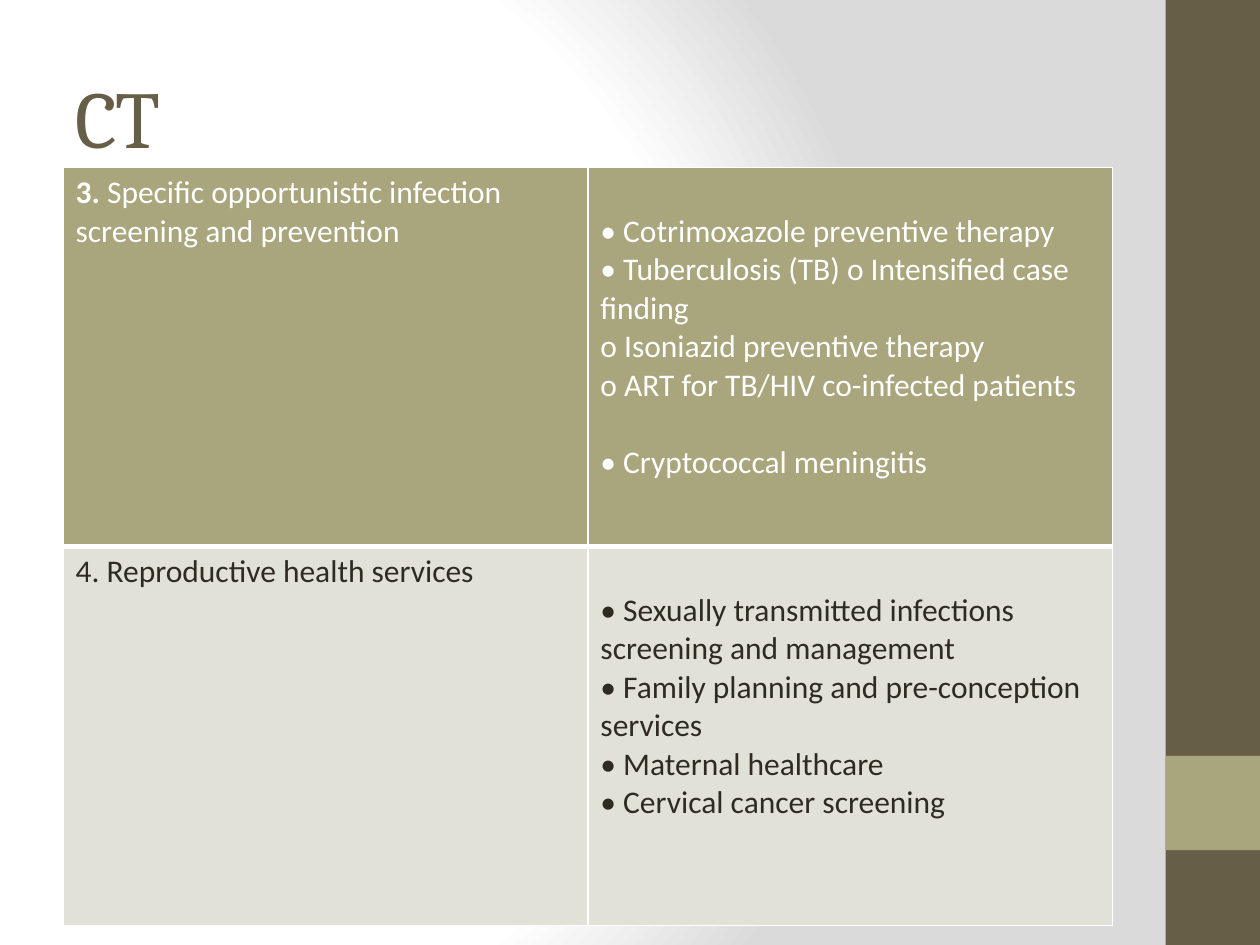
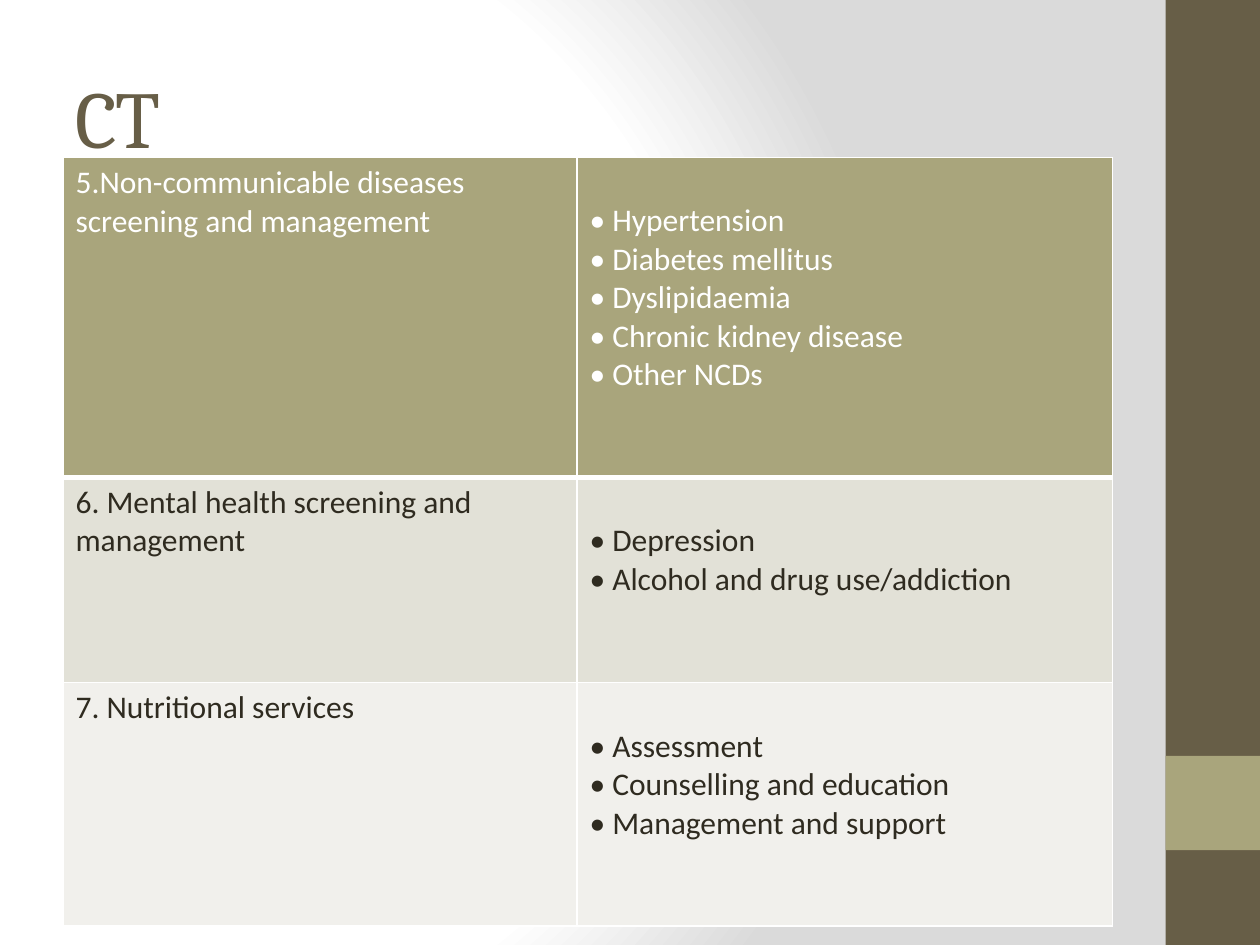
"""Build two slides listing the services of a care package in tables."""
from lxml.etree import SubElement, fromstring
from pptx import Presentation
from pptx.dml.color import RGBColor
from pptx.enum.shapes import MSO_SHAPE
from pptx.enum.text import MSO_ANCHOR
from pptx.oxml.ns import nsdecls, qn
from pptx.util import Cm, Pt

COLORS = {"white": "FFFFFF", "shade": "DADADA", "brown": "675E47", "olive": "A9A57C",
          "text": "2F2B20", "band1": "E2E1D7", "band2": "F1F0EC"}
ROW_FILLS = ["olive", "band1", "band2"]
TITLE_FONT, BODY_FONT = "Cambria", "Calibri"
LEFT, LINE = 1.27, 22
SIDE_BANDS = [(0, 19.05, "brown"), (15.24, 1.9, "olive")]

SLIDES = [
    {"title": "CT", "top": 3.38, "cols": [10.58, 10.58], "rows": [
        (7.64, [("3.", True), (" Specific opportunistic infection screening and prevention", False)],
         ["• Cotrimoxazole preventive therapy",
          "• Tuberculosis (TB) o Intensified case finding",
          "o Isoniazid preventive therapy",
          "o ART for TB/HIV co-infected patients",
          "• Cryptococcal meningitis"]),
        (7.64, [("4. Reproductive health services", False)],
         ["• Sexually transmitted infections screening and management",
          "• Family planning and pre-conception services",
          "• Maternal healthcare",
          "• Cervical cancer screening"]),
    ]},
    {"title": "CT", "top": 3.17, "cols": [10.36, 10.8], "rows": [
        (6.45, [("5.Non-communicable diseases screening and management", False)],
         ["• Hypertension", "• Diabetes mellitus", "• Dyslipidaemia",
          "• Chronic kidney disease", "• Other NCDs"]),
        (4.14, [("6. Mental health screening and management", False)],
         ["• Depression", "• Alcohol and drug use/addiction"]),
        (4.91, [("7. Nutritional services", False)],
         ["• Assessment", "• Counselling and education", "• Management and support"]),
    ]},
]
SPACED = {"• Cryptococcal meningitis"}


def rgb(name):
    return RGBColor.from_string(COLORS[name])


def set_background(master):
    master.background.fill.gradient()
    stops = "".join(f'<a:gs pos="{pos * 1000}"><a:srgbClr val="{COLORS[c]}"/></a:gs>'
                    for pos, c in [(0, "white"), (75, "white"), (100, "shade")])
    grad = fromstring(
        f'<a:gradFill {nsdecls("a")} rotWithShape="1"><a:gsLst>{stops}</a:gsLst><a:path path="circle">'
        '<a:fillToRect l="20000" t="50000" r="100000" b="50000"/></a:path></a:gradFill>')
    old = master.element.find(".//" + qn("a:gradFill"))
    old.getparent().replace(old, grad)


def add_run(p, text, font, size, color, bold=False):
    r = p.add_run()
    r.text = text
    r.font.name, r.font.size, r.font.bold = font, Pt(size), bold
    r.font.color.rgb = rgb(color)
    return r


def add_frame(s, title):
    for top, height, color in SIDE_BANDS:
        band = s.shapes.add_shape(MSO_SHAPE.RECTANGLE, Cm(23.5), Cm(top), Cm(1.9), Cm(height))
        band.shadow.inherit = False
        band.fill.solid()
        band.fill.fore_color.rgb = rgb(color)
        band.line.fill.background()
    tf = s.shapes.add_textbox(Cm(LEFT), Cm(0.76), Cm(21.16), Cm(3.18)).text_frame
    tf.word_wrap = True
    tf.vertical_anchor = MSO_ANCHOR.MIDDLE
    r = add_run(tf.paragraphs[0], title, TITLE_FONT, 46, "brown")
    r.font._element.set("spc", "-100")


def style_cell(cell, fill, top, bottom):
    tc_pr = cell._tc.get_or_add_tcPr()
    for side, width in [("L", 1), ("R", 1), ("T", top), ("B", bottom)]:
        ln = SubElement(tc_pr, qn(f"a:ln{side}"), w=str(Pt(width)))
        SubElement(SubElement(ln, qn("a:solidFill")), qn("a:srgbClr"), val=COLORS["white"])
    cell.fill.solid()
    cell.fill.fore_color.rgb = rgb(fill)


def add_services(s, top, cols, rows):
    height = sum(row[0] for row in rows)
    table = s.shapes.add_table(len(rows), len(cols), Cm(LEFT), Cm(top),
                               Cm(sum(cols)), Cm(height)).table
    table.first_row = table.horz_banding = False
    for column, width in zip(table.columns, cols):
        column.width = Cm(width)
    for i, (height, heading, services) in enumerate(rows):
        table.rows[i].height = Cm(height)
        color = "text" if i else "white"
        name_cell, list_cell = table.cell(i, 0), table.cell(i, 1)
        for cell in (name_cell, list_cell):
            style_cell(cell, ROW_FILLS[i], 3 if i == 1 else 1, 1 if i else 3)
        for text, bold in heading:
            add_run(name_cell.text_frame.paragraphs[0], text, BODY_FONT, 18, color, bold)
        list_cell.margin_top = Cm(0.9)
        tf = list_cell.text_frame
        for j, service in enumerate(services):
            p = tf.add_paragraph() if j else tf.paragraphs[0]
            if service in SPACED:
                p.space_before = Pt(LINE)
            add_run(p, service, BODY_FONT, 18, color)


def main():
    prs = Presentation()
    prs.slide_width, prs.slide_height = Cm(25.4), Cm(19.05)
    set_background(prs.slide_master)
    for content in SLIDES:
        s = prs.slides.add_slide(prs.slide_layouts[6])
        add_frame(s, content["title"])
        add_services(s, content["top"], content["cols"], content["rows"])
    prs.save("out.pptx")


if __name__ == "__main__":
    main()
